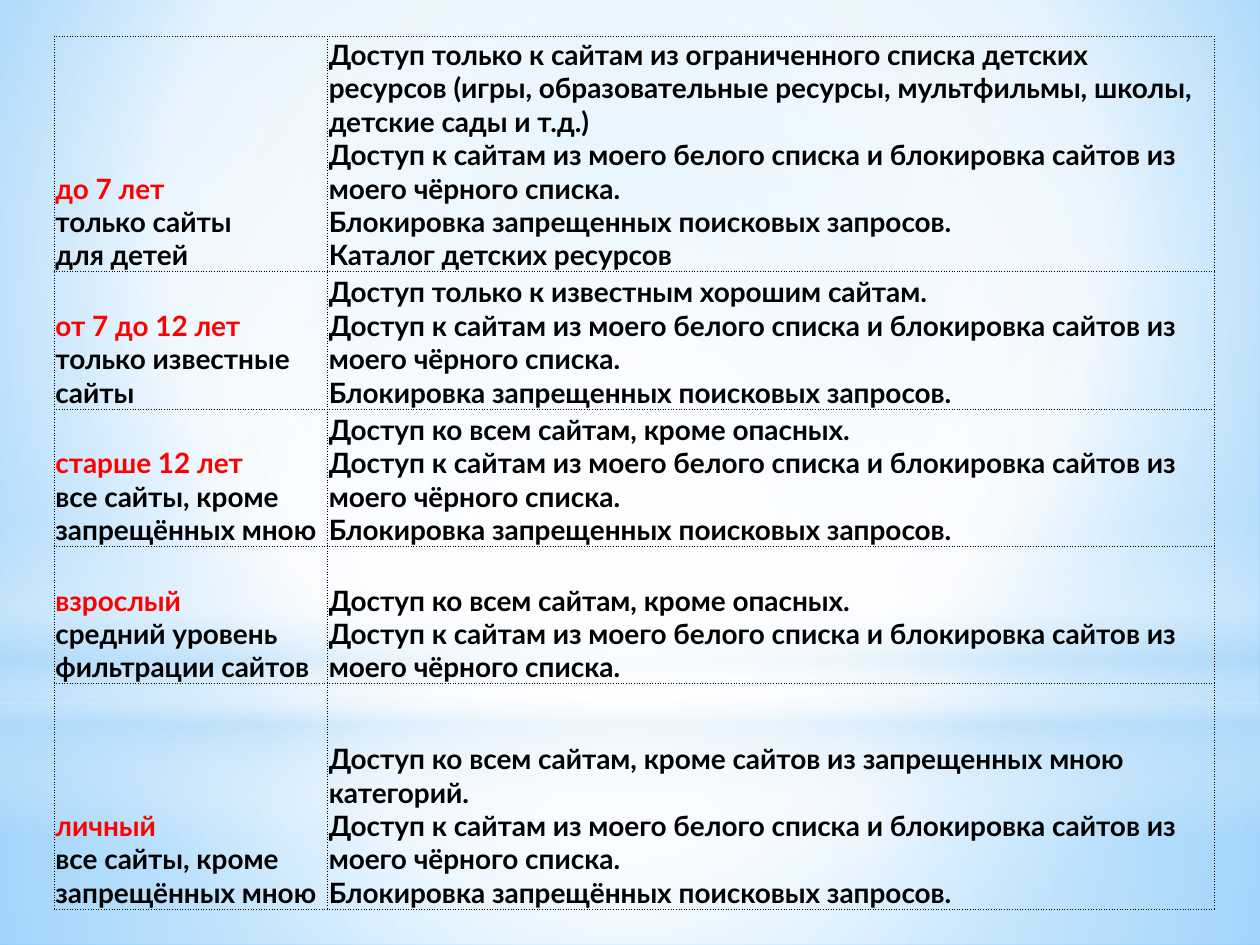
from copy import deepcopy

from lxml import etree
from pptx import Presentation
from pptx import util as u
from pptx.dml.color import RGBColor
from pptx.enum import shapes, text
from pptx.oxml import parse_xml
from pptx.oxml.ns import nsdecls, qn


def color(hex_value):
    return RGBColor.from_string(hex_value)


def gradient(stops, direction):
    """Build a gradient fill from (position %, colour, opacity %) stops."""
    stop_xml = "".join(
        f'<a:gs pos="{position * 1000}"><a:srgbClr val="{color(hex_value)}">'
        f'<a:alpha val="{opacity * 1000}"/></a:srgbClr></a:gs>'
        for position, hex_value, opacity in stops)
    return parse_xml(f'<a:gradFill {nsdecls("a")} rotWithShape="1">'
                     f'<a:gsLst>{stop_xml}</a:gsLst>{direction}</a:gradFill>')


CIRCLE = '<a:path path="circle"><a:fillToRect l="{}" t="{}" r="{}" b="{}"/></a:path>'
CENTERED = CIRCLE.format(*[50000] * 4)
DOWNWARD = '<a:lin ang="5400000" scaled="0"/>'

presentation = Presentation()
presentation.slide_width = u.Inches(10)
presentation.slide_height = u.Inches(7.5)
slide = presentation.slides.add_slide(presentation.slide_layouts[6])

# Background gradient
background = parse_xml(f'<p:bg {nsdecls("p", "a")}><p:bgPr><a:effectLst/></p:bgPr></p:bg>')
background[0].insert(0, gradient(
    [(0, "9ED5FF", 100), (60, "FFFFFF", 100), (100, "5BB9FF", 100)],
    CIRCLE.format(20000, 10000, 20000, 60000)))
slide.element.cSld.insert(0, background)

# Soft light layers: kind, top, height, stops, direction
RECTANGLE, OVAL = shapes.MSO_SHAPE.RECTANGLE, shapes.MSO_SHAPE.OVAL
layers = [
    (RECTANGLE, 5.58, 1.92,
     [(0, "FFFFFF", 91), (37, "FFFFFF", 76), (100, "B4DCFA", 79)], CENTERED),
    (RECTANGLE, 0, 5.58,
     [(0, "FFFFFF", 89), (48, "FFFFFF", 62), (100, "B4DCFA", 79)], CENTERED),
    (RECTANGLE, 4.12, 2.5,
     [(0, "FFFFFF", 0), (29, "FFFFFF", 30), (45, "B4DCFA", 40),
      (55, "FFFFFF", 26), (65, "B4DCFA", 60), (100, "FFFFFF", 0)], DOWNWARD),
    (OVAL, 1.75, 5.58, [(0, "FFFFFF", 100), (56, "FFFFFF", 0)], CENTERED),
]
for kind, top, height, stops, direction in layers:
    shape = slide.shapes.add_shape(kind, 0, u.Inches(top), u.Inches(10), u.Inches(height))
    shape.shadow.inherit = False
    shape.line.fill.background()
    shape._element.spPr.find(qn("a:prstGeom")).addnext(gradient(stops, direction))

# Table wording: each cell is a list of lines
own_lists = ("Доступ к сайтам из моего белого списка и блокировка сайтов "
             "из моего чёрного списка.")
blocked_queries = "Блокировка запрещенных поисковых запросов."
no_dangerous = "Доступ ко всем сайтам, кроме опасных."
all_but_banned = ["все сайты, кроме", "запрещённых мною"]
rows = [
    (["до 7 лет", "только сайты", "для детей"],
     ["Доступ только к сайтам из ограниченного списка детских ресурсов (игры, "
      "образовательные ресурсы, мультфильмы, школы, детские сады и т.д.)",
      own_lists, blocked_queries, "Каталог детских ресурсов"]),
    (["от 7 до 12 лет", "только известные", "сайты"],
     ["Доступ только к известным хорошим сайтам.", own_lists, blocked_queries]),
    (["старше 12 лет", *all_but_banned], [no_dangerous, own_lists, blocked_queries]),
    (["взрослый", "средний уровень", "фильтрации сайтов"], [no_dangerous, own_lists]),
    (["личный", *all_but_banned],
     ["Доступ ко всем сайтам, кроме сайтов из запрещенных мною категорий.",
      own_lists, "Блокировка запрещённых поисковых запросов."]),
]

# Table grid
table = slide.shapes.add_table(len(rows), 2, u.Inches(0.43), u.Inches(0.29),
                               u.Inches(9.21), u.Inches(6.85)).table
table.first_row = table.horz_banding = False
for column, width in zip(table.columns, (2.17, 7.04)):
    column.width = u.Inches(width)
for row, height in zip(table.rows, (1.86, 1.09, 1.09, 1.09, 1.79)):
    row.height = u.Inches(height)

# Cells: text, insets and dotted borders
cell_format = {"vertical_anchor": text.MSO_ANCHOR.BOTTOM,
               "margin_left": u.Inches(0.01), "margin_right": u.Inches(0.01),
               "margin_top": u.Inches(0.01), "margin_bottom": 0}
font_format = {"name": "Lato", "size": u.Pt(16), "bold": True}
for row_index, row in enumerate(rows):
    for column_index, lines in enumerate(row):
        cell = table.cell(row_index, column_index)
        for name, value in cell_format.items():
            setattr(cell, name, value)
        paragraph = cell.text_frame.paragraphs[0]
        for line_index, line in enumerate(lines):
            if line_index:
                paragraph.add_line_break()
                paragraph._p[-1].append(deepcopy(run._r.rPr))
            run = paragraph.add_run()
            run.text = line
            for name, value in font_format.items():
                setattr(run.font, name, value)
            is_age = column_index == 0 and line_index == 0
            run.font.color.rgb = color("FF0000" if is_age else "000000")
        properties = cell._tc.get_or_add_tcPr()
        for side in ("lnL", "lnR", "lnT", "lnB"):
            border = etree.SubElement(properties, qn(f"a:{side}"), w=str(u.Pt(0.5)))
            border_fill = etree.SubElement(border, qn("a:solidFill"))
            etree.SubElement(border_fill, qn("a:srgbClr"), val="000000")
            etree.SubElement(border, qn("a:prstDash"), val="sysDot")
        cell.fill.background()

presentation.save("out.pptx")
